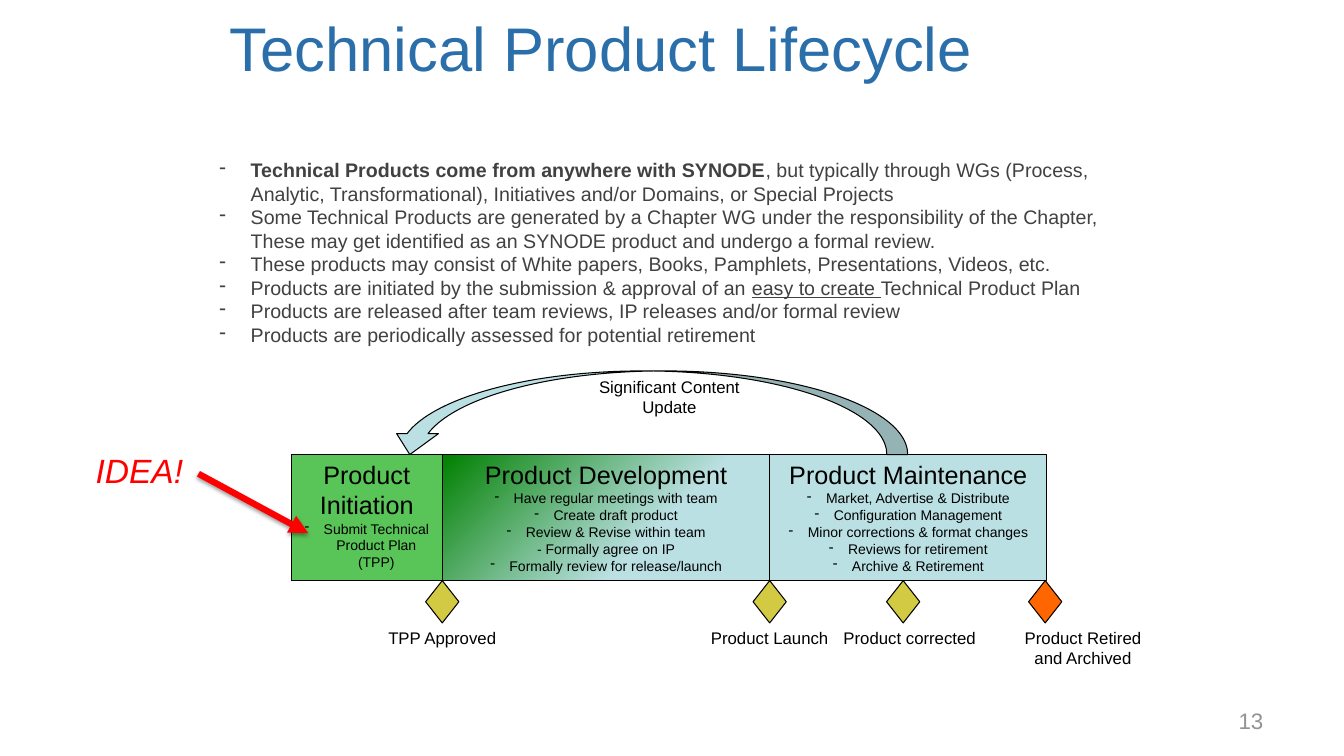
from collections import namedtuple
from lxml import etree
from pptx import Presentation
from pptx.dml.color import RGBColor
from pptx.enum.shapes import MSO_CONNECTOR, MSO_SHAPE
from pptx.enum.text import MSO_ANCHOR, PP_ALIGN
from pptx.oxml.ns import qn
from pptx.util import Inches, Pt

Box = namedtuple("Box", "x y w h")
CELL = Inches(0.1)
FONT = "Arial"
LEFT, MID, RIGHT = PP_ALIGN.LEFT, PP_ALIGN.CENTER, PP_ALIGN.RIGHT
TOP, CENTER = MSO_ANCHOR.TOP, MSO_ANCHOR.MIDDLE
RECT, DIAMOND = MSO_SHAPE.RECTANGLE, MSO_SHAPE.DIAMOND
BEND, LINE = MSO_SHAPE.CURVED_RIGHT_ARROW, MSO_CONNECTOR.STRAIGHT
BLACK = RGBColor(0, 0, 0)
BLUE = RGBColor(0x2B, 0x6F, 0xAA)
INK = RGBColor(0x41, 0x40, 0x42)
GRAY = RGBColor(0x93, 0x93, 0x93)
GREEN = RGBColor(0x59, 0xC4, 0x57)
DARK = RGBColor(0, 0x80, 0)
PALE = RGBColor(0xBB, 0xE0, 0xE3)
GOLD = RGBColor(0xD3, 0xCA, 0x44)
ORANGE = RGBColor(0xFF, 0x66, 0)
RED = RGBColor(0xFF, 0, 0)

POINTS = [
    [("Technical Products come from anywhere with SYNODE", "b"),
     (", but typically through WGs (Process, Analytic, Transformational), "
      "Initiatives and/or Domains, or Special Projects", "")],
    [("Some Technical Products are generated by a Chapter WG under the "
      "responsibility of the Chapter, These may get identified as an SYNODE "
      "product and undergo a formal review.", "")],
    [("These products may consist of White papers, Books, Pamphlets, "
      "Presentations, Videos, etc.", "")],
    [("Products are initiated by the submission & approval of an ", ""),
     ("easy to create ", "u"), ("Technical Product Plan", "")],
    [("Products are released after team reviews, IP releases and/or formal review", "")],
    [("Products are periodically assessed for potential retirement", "")],
]
PHASES = [
    (15, GREEN, "Product Initiation", ["Submit Technical Product Plan (TPP)"]),
    (32.5, None, "Product Development",
     ["Have regular meetings with team", "Create draft product",
      "Review & Revise within team", "- Formally agree on IP",
      "Formally review for release/launch"]),
    (27.5, PALE, "Product Maintenance",
     ["Market, Advertise & Distribute", "Configuration Management",
      "Minor corrections & format changes", "Reviews for retirement",
      "Archive & Retirement"]),
]
GATES = [
    (15, 15, GOLD, ["TPP Approved"]),
    (47.5, 47.5, GOLD, ["Product Launch"]),
    (60.75, 61.4, GOLD, ["Product corrected"]),
    (74.85, 78.6, ORANGE, ["Product Retired", "and Archived"]),
]


def span(*cells):
    """Turn grid cells into slide lengths."""
    return [int(c * CELL) for c in cells]


def style(par, size, color, align=LEFT):
    """Set the font and alignment of a paragraph."""
    par.alignment = align
    par.font.name, par.font.size = FONT, Pt(size)
    par.font.color.rgb = color


def dash(par, indent):
    """Give a paragraph a hanging dash bullet."""
    props = par._p.get_or_add_pPr()
    props.set("marL", str(Inches(indent)))
    props.set("indent", str(-Inches(indent)))
    etree.SubElement(props, qn("a:buChar"), char="-")


def fresh(frame, first):
    """Return the first paragraph of a frame, or a new one."""
    return frame.paragraphs[0] if first else frame.add_paragraph()


def write(slide, box, lines, size, color, align=LEFT, anchor=TOP):
    """Add a text box with plain lines and return its frame."""
    frame = slide.shapes.add_textbox(*span(*box)).text_frame
    frame.word_wrap, frame.vertical_anchor = True, anchor
    for i, line in enumerate(lines):
        par = fresh(frame, i == 0)
        par.text = line
        style(par, size, color, align)
    return frame


def draw(slide, kind, box, color):
    """Add an outlined shape, filled when a color is given."""
    shape = slide.shapes.add_shape(kind, *span(*box))
    shape.shadow.inherit = False
    shape.line.color.rgb, shape.line.width = BLACK, Pt(0.75)
    if color is not None:
        shape.fill.solid()
        shape.fill.fore_color.rgb = color
    return shape


def blend(shape):
    """Fill a shape with a round blend from its lower right corner."""
    shape.fill.gradient()
    for stop, color, place in zip(shape.fill.gradient_stops, (PALE, DARK), (0.36, 1)):
        stop.color.rgb, stop.position = color, place
    grad = shape._element.spPr.find(qn("a:gradFill"))
    grad.remove(grad.find(qn("a:lin")))
    ring = etree.SubElement(grad, qn("a:path"), path="circle")
    etree.SubElement(ring, qn("a:fillToRect"), l="100000", t="100000")


def points(slide, box):
    """Add the dashed list of statements."""
    frame = write(slide, box, [], 14, INK)
    for i, parts in enumerate(POINTS):
        par = fresh(frame, i == 0)
        dash(par, 0.31)
        style(par, 14, INK)
        for text, mark in parts:
            run = par.add_run()
            run.text = text
            if mark == "b":
                run.font.bold = True
            elif mark == "u":
                run.font.underline = True


def phase(slide, box, color, head, tasks):
    """Add one phase block with its heading and tasks."""
    shape = draw(slide, RECT, box, color)
    if color is None:
        blend(shape)
    frame = shape.text_frame
    frame.word_wrap, frame.vertical_anchor = True, TOP
    frame.text = head
    style(frame.paragraphs[0], 18, BLACK, MID)
    for task in tasks:
        par = frame.add_paragraph()
        par.text = task
        if not task.startswith("-"):
            dash(par, 0.19)
        style(par, 10, BLACK, MID)


def cycle(slide, box):
    """Add the phases, gates and return arrow of the lifecycle."""
    rise, tall = 8.3, 12.5
    x = box.x
    for wide, color, head, tasks in PHASES:
        phase(slide, Box(x, box.y + rise, wide, tall), color, head, tasks)
        x += wide
    base = box.y + rise + tall
    for spot, mid, color, label in GATES:
        draw(slide, DIAMOND, Box(box.x + spot - 1.65, base, 3.3, 4.2), color)
        write(slide, Box(box.x + mid - 8, base + 4.2, 16, 5), label, 12, BLACK, MID)
    wide = 51.5
    mid = box.x + 35.45
    bend = draw(slide, BEND, Box(mid - rise / 2, box.y + (rise - wide) / 2, rise, wide), PALE)
    bend.rotation = 90
    for i, share in enumerate((0.25, 0.5, 0.25)):
        bend.adjustments[i] = share
    write(slide, Box(box.x + 26.8, box.y + 0.1, 21.5, 5),
          ["Significant Content Update"], 12, BLACK, MID)


def idea(slide, box):
    """Add the idea label and the arrow into the first phase."""
    ends = span(box.x + 11.2, box.y + 2.9, box.x + box.w, box.y + box.h)
    line = slide.shapes.add_connector(LINE, *ends)
    line.line.color.rgb, line.line.width = RED, Pt(4.5)
    etree.SubElement(line.line._get_or_add_ln(), qn("a:tailEnd"), type="triangle")
    glow = etree.SubElement(line._element.spPr, qn("a:effectLst"))
    shade = etree.SubElement(glow, qn("a:outerShdw"), blurRad=str(Pt(3.1)),
                             dist=str(Pt(1.6)), dir="5400000", rotWithShape="0")
    tint = etree.SubElement(shade, qn("a:srgbClr"), val="000000")
    etree.SubElement(tint, qn("a:alpha"), val="38000")
    frame = write(slide, Box(box.x, box.y, 12.9, 5.1), ["IDEA!"], 24, RED)
    frame.paragraphs[0].font.italic = True


def main():
    """Build and save the slide."""
    deck = Presentation()
    deck.slide_width, deck.slide_height = span(133.4, 75)
    slide = deck.slides.add_slide(deck.slide_layouts[6])
    head = write(slide, Box(21.5, 0, 90, 9.2), ["Technical Product Lifecycle"],
                 44, BLUE, anchor=CENTER)
    points(slide, Box(20.8, 15.2, 91.8, 19.9))
    foot = write(slide, Box(95.6, 69.5, 31.1, 4), ["13"], 16, GRAY, RIGHT, CENTER)
    for frame in (head, foot):
        frame.margin_left = frame.margin_right = Inches(0.13)
        frame.margin_top = frame.margin_bottom = Inches(0.07)
    cycle(slide, Box(28.9, 36.8, 75, 30))
    idea(slide, Box(8.5, 44.1, 22.1, 8.8))
    deck.save("out.pptx")


if __name__ == "__main__":
    main()
